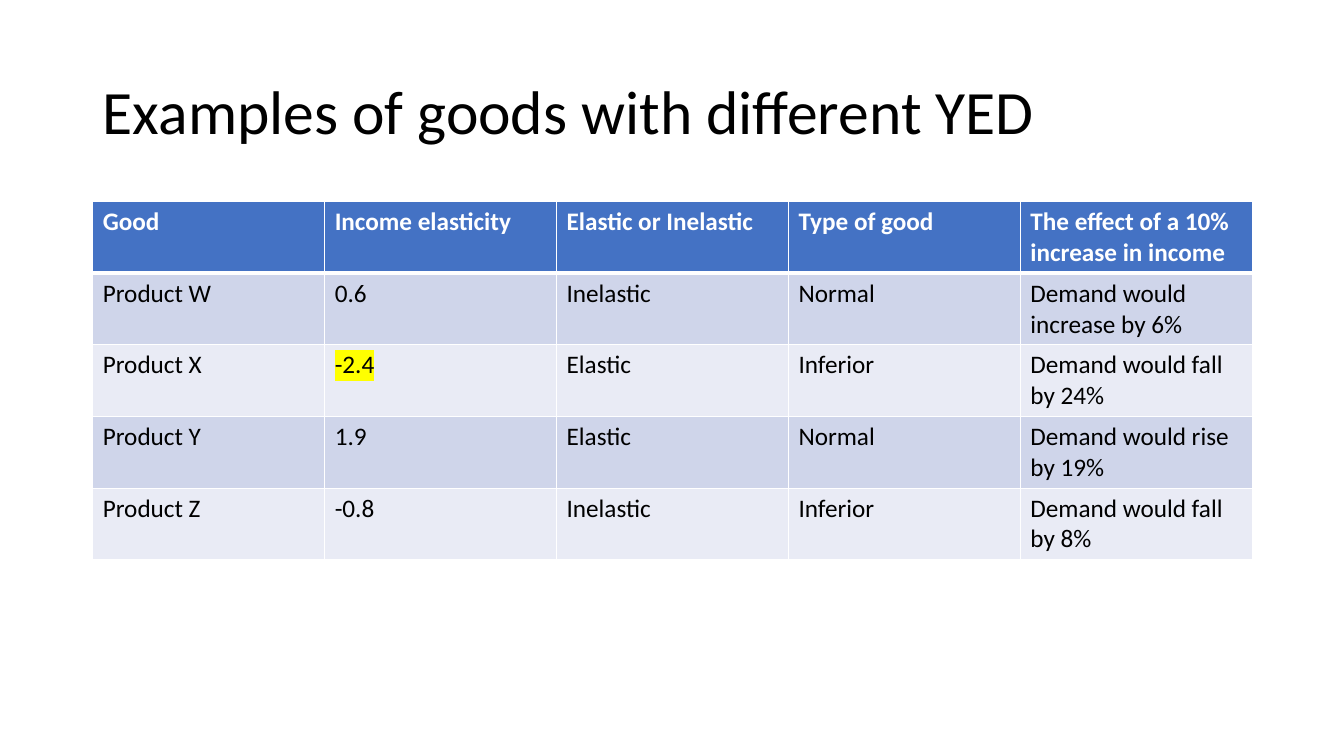
import lxml.etree
import pptx
import pptx.dml.color
import pptx.enum.dml
import pptx.enum.text
import pptx.oxml.ns
import pptx.util

RGBColor = pptx.dml.color.RGBColor
BLACK = RGBColor(0x00, 0x00, 0x00)
WHITE = RGBColor(0xFF, 0xFF, 0xFF)
HEADER_BLUE = RGBColor(0x44, 0x72, 0xC4)
BANDS = (RGBColor(0xCF, 0xD5, 0xEA), RGBColor(0xE9, 0xEB, 0xF5))
YELLOW = RGBColor(0xFF, 0xFF, 0x00)

TITLE = "Examples of goods with different YED"
GOODS = (
    ("Good", "Income elasticity", "Elastic or Inelastic", "Type of good",
     "The effect of a 10% increase in income"),
    ("Product W", "0.6", "Inelastic", "Normal", "Demand would increase by 6%"),
    ("Product X", "-2.4", "Elastic", "Inferior", "Demand would fall by 24%"),
    ("Product Y", "1.9", "Elastic", "Normal", "Demand would rise by 19%"),
    ("Product Z", "-0.8", "Inelastic", "Inferior", "Demand would fall by 8%"),
)
HIGHLIGHTED = "-2.4"


class ElasticitySlide:
    """Holds the deck style and the current slide, measured in grid columns and rows."""

    font = "Calibri"
    left = 0.92
    column = 2.3
    row = 0.7

    def __init__(self, deck):
        self.page = deck.slides.add_slide(deck.slide_layouts[5])

    def place(self, box, top, columns, rows):
        box.left = pptx.util.Inches(self.left)
        box.top = pptx.util.Inches(top)
        box.width = pptx.util.Inches(columns * self.column)
        box.height = pptx.util.Inches(rows * self.row)

    def span(self, para, text, size, color, bold=False, highlight=None):
        span = para.add_run()
        span.text = text
        span.font.name = self.font
        span.font.size = pptx.util.Pt(size)
        span.font.bold = bold
        span.font.color.rgb = color
        if highlight is not None:
            qn = pptx.oxml.ns.qn
            marker = lxml.etree.Element(qn("a:highlight"))
            lxml.etree.SubElement(marker, qn("a:srgbClr"), val=str(highlight))
            span.font._element.find(qn("a:solidFill")).addnext(marker)

    def title(self, text, top, columns, rows):
        box = self.page.shapes.title
        self.place(box, top, columns, rows)
        frame = box.text_frame
        frame.word_wrap = True
        frame.auto_size = pptx.enum.text.MSO_AUTO_SIZE.NONE
        frame.vertical_anchor = pptx.enum.text.MSO_ANCHOR.MIDDLE
        para = frame.paragraphs[0]
        para.alignment = pptx.enum.text.PP_ALIGN.LEFT
        para.line_spacing = 0.9
        self.span(para, text, 44, BLACK)

    def borders(self, cell, top, bottom):
        qn = pptx.oxml.ns.qn
        properties = cell._tc.get_or_add_tcPr()
        sides = (("a:lnL", 1), ("a:lnR", 1), ("a:lnT", top), ("a:lnB", bottom))
        for position, (side, points) in enumerate(sides):
            line = lxml.etree.Element(qn(side), w=str(pptx.util.Pt(points)))
            fill = lxml.etree.SubElement(line, qn("a:solidFill"))
            lxml.etree.SubElement(fill, qn("a:srgbClr"), val=str(WHITE))
            properties.insert(position, line)

    def table(self, rows, top):
        count, columns = len(rows), len(rows[0])
        box = self.page.shapes.add_table(count, columns, 0, 0, 0, 0)
        self.place(box, top, columns, count)
        for column in box.table.columns:
            column.width = pptx.util.Inches(self.column)
        for index, texts in enumerate(rows):
            box.table.rows[index].height = pptx.util.Inches(self.row)
            header = index == 0
            for cell, text in zip(box.table.rows[index].cells, texts):
                cell.fill.solid()
                cell.fill.fore_color.rgb = HEADER_BLUE if header else BANDS[(index - 1) % 2]
                self.borders(cell, 3 if index == 1 else 1, 3 if header else 1)
                self.span(cell.text_frame.paragraphs[0], text, 18,
                          WHITE if header else BLACK, header,
                          YELLOW if text == HIGHLIGHTED else None)


def main():
    deck = pptx.Presentation()
    deck.slide_width = pptx.util.Inches(13.33)
    deck.slide_height = pptx.util.Inches(7.5)
    slide = ElasticitySlide(deck)
    slide.title(TITLE, top=0.41, columns=5, rows=2.07)
    slide.table(GOODS, top=2)
    deck.save("out.pptx")


if __name__ == "__main__":
    main()
